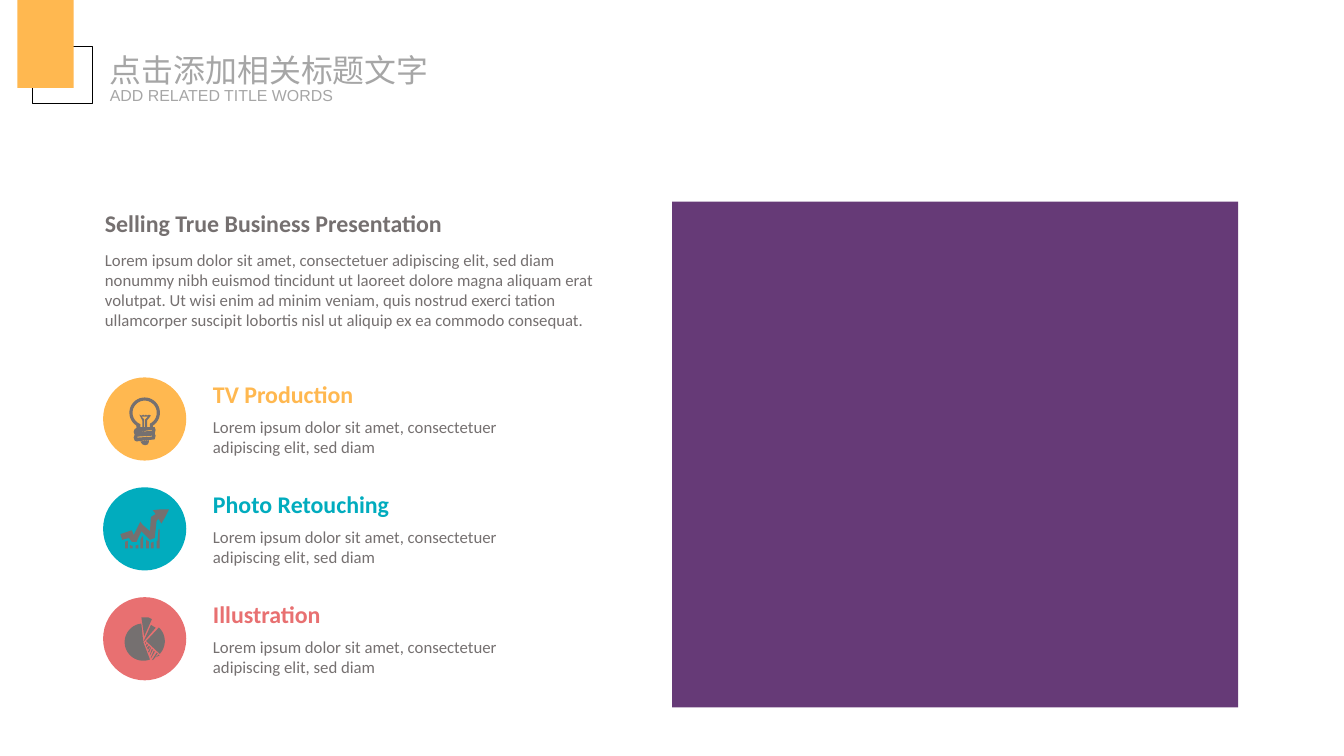
from dataclasses import dataclass
from math import cos, radians, sin

from lxml import etree
from pptx import Presentation
from pptx.dml.color import RGBColor
from pptx.enum.shapes import MSO_SHAPE
from pptx.enum.text import MSO_ANCHOR, PP_ALIGN
from pptx.oxml.ns import qn
from pptx.util import Cm, Pt

RECT, OVAL = MSO_SHAPE.RECTANGLE, MSO_SHAPE.OVAL
TOP, LEFT = MSO_ANCHOR.TOP, PP_ALIGN.LEFT

COLORS = {
    "amber": "FFB850", "teal": "01ACBE", "coral": "E87071", "plum": "663A77",
    "gray": "757070", "pale": "A6A6A6", "black": "000000",
}
STYLES = {
    "title": {"name": "Noto Sans CJK SC", "size": Pt(24), "bold": False},
    "sub": {"name": "Arial", "size": Pt(12), "bold": False},
    "head": {"name": "Calibri", "size": Pt(18), "bold": True},
    "body": {"name": "Calibri", "size": Pt(12.6), "bold": False},
}
Loop = list[tuple[float, float]]
ICON_UNIT = 2.54 / 100


@dataclass
class Label:
    text: str
    left: float
    top: float
    width: float
    height: float
    style: str
    color: str = "gray"
    wrap: bool = False
    pad: bool = True


@dataclass
class Block:
    kind: int
    left: float
    top: float
    width: float
    height: float
    fill: str = ""
    line: str = ""


@dataclass
class Item:
    name: str
    width: float
    color: str
    icon: list[Loop]


def arc(x: float, y: float, size: float, start: int, stop: int) -> Loop:
    turns = [radians(start + (stop - start) * i / 32) for i in range(33)]
    return [(x + size * cos(t), y + size * sin(t)) for t in turns]


BULB = [
    arc(43.5, 37, 16, 123, 417) + [
        (52, 52), (54, 52), (55, 55), (54, 59), (55, 61), (54, 65), (53, 65),
        (35, 67), (33, 66), (32, 63), (33, 60), (32, 57), (33, 54), (35, 53)],
    arc(43.5, 37, 12.7, 117, 423) + [
        (49, 49), (49, 52), (46, 52), (46, 45), (50, 40), (48, 39), (46, 40), (45, 39),
        (43, 40), (42, 39), (40, 40), (38, 39), (41, 45), (41, 52), (39, 52), (39, 49)],
    [(47, 41), (40, 41), (43, 44), (43, 52), (44, 52), (44, 44)],
    [(48, 66), (39, 67), (41, 70), (44, 71), (47, 70), (48, 67)],
    [(51, 61), (36, 62), (36, 63), (51, 62)],
    [(51, 55), (36, 57), (51, 56)],
]
CHART = [
    [(69, 23), (65, 31), (61, 38), (58, 33), (56, 35), (54, 53), (49, 55), (40, 46),
     (35, 57), (30, 57), (27, 53), (20, 55), (18, 49), (30, 45), (32, 50), (37, 40),
     (39, 36), (41, 39), (49, 46), (50, 31), (55, 28), (52, 24), (60, 23)],
    [(56, 64), (59, 64), (59, 44), (58, 44), (57, 56), (56, 56)],
    [(28, 64), (31, 64), (31, 61), (29, 61), (28, 60)],
    [(23, 64), (26, 64), (26, 56), (23, 57)],
    [(34, 64), (37, 64), (37, 60), (34, 61)],
    [(39, 64), (42, 64), (42, 53), (41, 51), (39, 55)],
    [(45, 64), (48, 64), (48, 57), (45, 55)],
    [(50, 64), (53, 64), (53, 57), (50, 58)],
]
PIE = [
    arc(45, 46, 19.5, -47, 43) + [(45, 46)],
    [(50, 29), (42, 47)] + arc(42, 47, 19.5, 264, 69) + [(42, 47), (55, 32)],
    [(43, 21), (40, 21), (43, 41), (51, 23), (47, 21)],
    [(59, 61), (55, 63), (58, 60)],
    [(53, 65), (57, 59), (56, 58), (51, 66)],
    [(50, 64), (54, 57), (53, 56), (50, 63)],
    [(49, 61), (52, 55), (51, 54), (49, 60)],
    [(48, 58), (50, 53), (50, 52), (47, 57)],
    [(47, 55), (49, 52), (48, 51), (46, 53)],
    [(45, 52), (47, 50), (46, 49), (45, 50)],
    [(44, 49), (44, 47), (45, 48)],
]

BRIEF = "Lorem ipsum dolor sit amet, consectetuer adipiscing elit, sed diam"
STORY = BRIEF + (
    " nonummy nibh euismod tincidunt ut laoreet dolore magna aliquam erat volutpat."
    " Ut wisi enim ad minim veniam, quis nostrud exerci tation ullamcorper suscipit"
    " lobortis nisl ut aliquip ex ea commodo consequat.")
BLOCKS = [
    Block(RECT, 17.86, 5.36, 15.04, 13.44, fill="plum"),
    Block(RECT, 0.86, 1.24, 1.6, 1.52, line="black"),
    Block(RECT, 0.46, 0, 1.5, 2.34, fill="amber"),
]
LABELS = [
    Label("点击添加相关标题文字", 2.92, 1.35, 8.56, 1.02, "title", "pale", pad=False),
    Label("ADD RELATED TITLE WORDS", 2.92, 2.27, 5.99, 0.51, "sub", "pale", pad=False),
    Label("Selling True Business Presentation", 2.54, 5.43, 9.53, 1.02, "head"),
    Label(STORY, 2.54, 6.5, 13.74, 2.41, "body", wrap=True),
]
ITEMS = [
    Item("TV Production", 4.27, "amber", BULB),
    Item("Photo Retouching", 5.26, "teal", CHART),
    Item("Illustration", 4.27, "coral", PIE),
]
ITEM_TOP, ITEM_STEP = 10.03, 2.92


def color(name: str) -> RGBColor:
    return RGBColor.from_string(COLORS[name])


def paint(shape, fill: str, line: str = "") -> None:
    shape.shadow.inherit = False
    for part, name in ((shape.fill, fill), (shape.line.fill, line)):
        if name:
            part.solid()
            part.fore_color.rgb = color(name)
        else:
            part.background()
    if line:
        shape.line.width = Pt(1)


def add_block(shapes, block: Block) -> None:
    place = [Cm(v) for v in (block.left, block.top, block.width, block.height)]
    paint(shapes.add_shape(block.kind, *place), block.fill, block.line)


def add_label(shapes, label: Label) -> None:
    place = [Cm(v) for v in (label.left, label.top, label.width, label.height)]
    frame = shapes.add_textbox(*place).text_frame
    form = {"word_wrap": label.wrap, "vertical_anchor": TOP}
    if not label.pad:
        form |= {"margin_" + side: 0 for side in ("left", "top", "right", "bottom")}
    for key, value in form.items():
        setattr(frame, key, value)
    line = frame.paragraphs[0]
    line.alignment = LEFT
    run = line.add_run()
    run.text = label.text
    for key, value in STYLES[label.style].items():
        setattr(run.font, key, value)
    run.font.color.rgb = color(label.color)
    east = etree.SubElement(run.font._element, qn("a:ea"))
    east.set("typeface", run.font.name)


def add_icon(shapes, loops: list[Loop], left: float, top: float) -> None:
    paths = [[(Cm(x * ICON_UNIT), Cm(y * ICON_UNIT)) for x, y in loop] for loop in loops]
    pen = shapes.build_freeform(*paths[0][0])
    for path in paths:
        pen.move_to(*path[0])
        pen.add_line_segments(path[1:], close=True)
    paint(pen.convert_to_shape(Cm(left), Cm(top)), "gray")


def add_item(shapes, item: Item, top: float) -> None:
    add_block(shapes, Block(OVAL, 2.74, top, 2.21, 2.21, fill=item.color))
    add_icon(shapes, item.icon, 2.74, top)
    add_label(shapes, Label(item.name, 5.41, top - 0.07, item.width, 1.02, "head", item.color, wrap=True))
    add_label(shapes, Label(BRIEF, 5.41, top + 0.92, 8.94, 1.35, "body", wrap=True))


def main() -> None:
    deck = Presentation()
    deck.slide_width, deck.slide_height = Cm(35.71), Cm(20.09)
    shapes = deck.slides.add_slide(deck.slide_layouts[6]).shapes
    for block in BLOCKS:
        add_block(shapes, block)
    for label in LABELS:
        add_label(shapes, label)
    for row, item in enumerate(ITEMS):
        add_item(shapes, item, ITEM_TOP + row * ITEM_STEP)
    deck.save("out.pptx")


if __name__ == "__main__":
    main()
